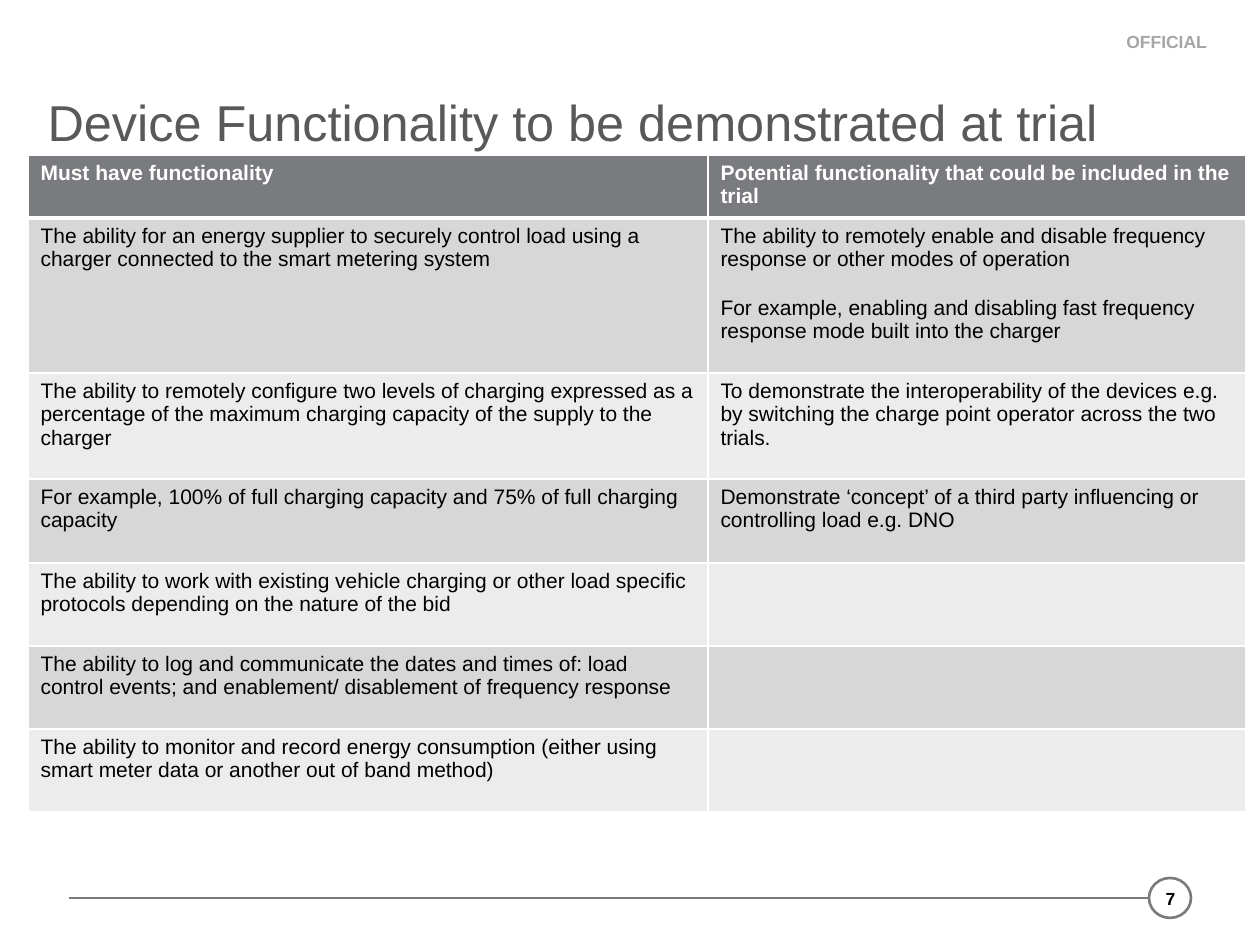
"""Builds the slide on device functionality to be demonstrated at trial."""
from lxml.etree import SubElement
from pptx import Presentation
from pptx.dml.color import RGBColor
from pptx.enum.shapes import MSO_CONNECTOR, MSO_SHAPE
from pptx.enum.text import MSO_ANCHOR, MSO_AUTO_SIZE, PP_ALIGN
from pptx.oxml.ns import qn
from pptx.util import Inches, Pt

PX = 914400 / 126
WHITE = RGBColor(0xFF, 0xFF, 0xFF)
BLACK = RGBColor(0, 0, 0)
GREY = RGBColor(0x79, 0x7B, 0x7E)
TITLE = RGBColor(0x59, 0x59, 0x59)
MARK = RGBColor(0xA6, 0xA6, 0xA6)
BANDS = [RGBColor(0xEC, 0xEC, 0xEC), RGBColor(0xD7, 0xD7, 0xD8)]

COLS = [680, 538]
ROWS = [58, 155, 106, 84, 83, 83, 83]
CELLS = [
    ("Must have functionality",
     "Potential functionality that could be included in the trial"),
    ("The ability for an energy supplier to securely control load using a charger "
     "connected to the smart metering system",
     "The ability to remotely enable and disable frequency response or other modes "
     "of operation\nFor example, enabling and disabling fast frequency response mode "
     "built into the charger"),
    ("The ability to remotely configure two levels of charging expressed as a "
     "percentage of the maximum charging capacity of the supply to the charger",
     "To demonstrate the interoperability of the devices e.g. by switching the charge "
     "point operator across the two trials."),
    ("For example, 100% of full charging capacity and 75% of full charging capacity",
     "Demonstrate ‘concept’ of a third party influencing or controlling load e.g. DNO"),
    ("The ability to work with existing vehicle charging or other load specific "
     "protocols depending on the nature of the bid", ""),
    ("The ability to log and communicate the dates and times of: load control events; "
     "and enablement/ disablement of frequency response", ""),
    ("The ability to monitor and record energy consumption (either using smart meter "
     "data or another out of band method)", ""),
]


def px(*values):
    return [round(v * PX) for v in values]


def style(p, size, color, bold=False):
    for r in p.runs:
        r.font.name = "Arial"
        r.font.size = Pt(size)
        r.font.bold = bold
        r.font.color.rgb = color


prs = Presentation()
prs.slide_width, prs.slide_height = Inches(10), Inches(7.5)
s = prs.slides.add_slide(prs.slide_layouts[5])

line = s.shapes.add_connector(MSO_CONNECTOR.STRAIGHT, *px(1149, 898, 69, 898))
line.line.color.rgb = GREY
line.line.width = Pt(1.5)
SubElement(line._element.spPr, qn("a:effectLst"))

ring = s.shapes.add_shape(MSO_SHAPE.OVAL, *px(1149, 878, 42, 40))
ring.shadow.inherit = False
ring.fill.background()
ring.line.color.rgb = GREY
ring.line.width = Pt(1.5)

title = s.shapes.title
title.left, title.top, title.width, title.height = px(35, 76, 1152, 98)
tf = title.text_frame
tf.text = "Device Functionality to be demonstrated at trial"
tf.auto_size = MSO_AUTO_SIZE.NONE
tf.vertical_anchor = MSO_ANCHOR.MIDDLE
p = tf.paragraphs[0]
p.alignment = PP_ALIGN.LEFT
p.line_spacing = 0.9
style(p, 28.8, TITLE)

mark = s.shapes.add_textbox(*px(1114, 25, 107, 34))
tf = mark.text_frame
tf.text = "OFFICIAL"
tf.word_wrap = False
style(tf.paragraphs[0], 10, MARK, True)

number = s.shapes.add_textbox(*px(1147, 885, 47, 28))
tf = number.text_frame
tf.text = "7"
tf.word_wrap = True
tf.vertical_anchor = MSO_ANCHOR.MIDDLE
tf.margin_left = tf.margin_right = Inches(0.04)
p = tf.paragraphs[0]
p.alignment = PP_ALIGN.CENTER
style(p, 10, BLACK, True)

frame = s.shapes.add_table(len(ROWS), len(COLS), *px(28, 155, sum(COLS), sum(ROWS)))
table = frame.table
for col, width in zip(table.columns, px(*COLS)):
    col.width = width
for row, height in zip(table.rows, px(*ROWS)):
    row.height = height

for i, texts in enumerate(CELLS):
    for j, text in enumerate(texts):
        cell = table.cell(i, j)
        tcPr = cell._tc.get_or_add_tcPr()
        for side in "LRTB":
            thick = (i == 0 and side == "B") or (i == 1 and side == "T")
            ln = SubElement(tcPr, qn(f"a:ln{side}"), w=str(Pt(3 if thick else 1)))
            fill = SubElement(ln, qn("a:solidFill"))
            SubElement(fill, qn("a:srgbClr"), val=str(WHITE))
        cell.fill.solid()
        cell.fill.fore_color.rgb = BANDS[i % 2] if i else GREY
        cell.text_frame.text = text
        for k, p in enumerate(cell.text_frame.paragraphs):
            if k:
                p.space_before = Pt(14)
            style(p, 12, BLACK if i else WHITE, i == 0)

prs.save("out.pptx")
